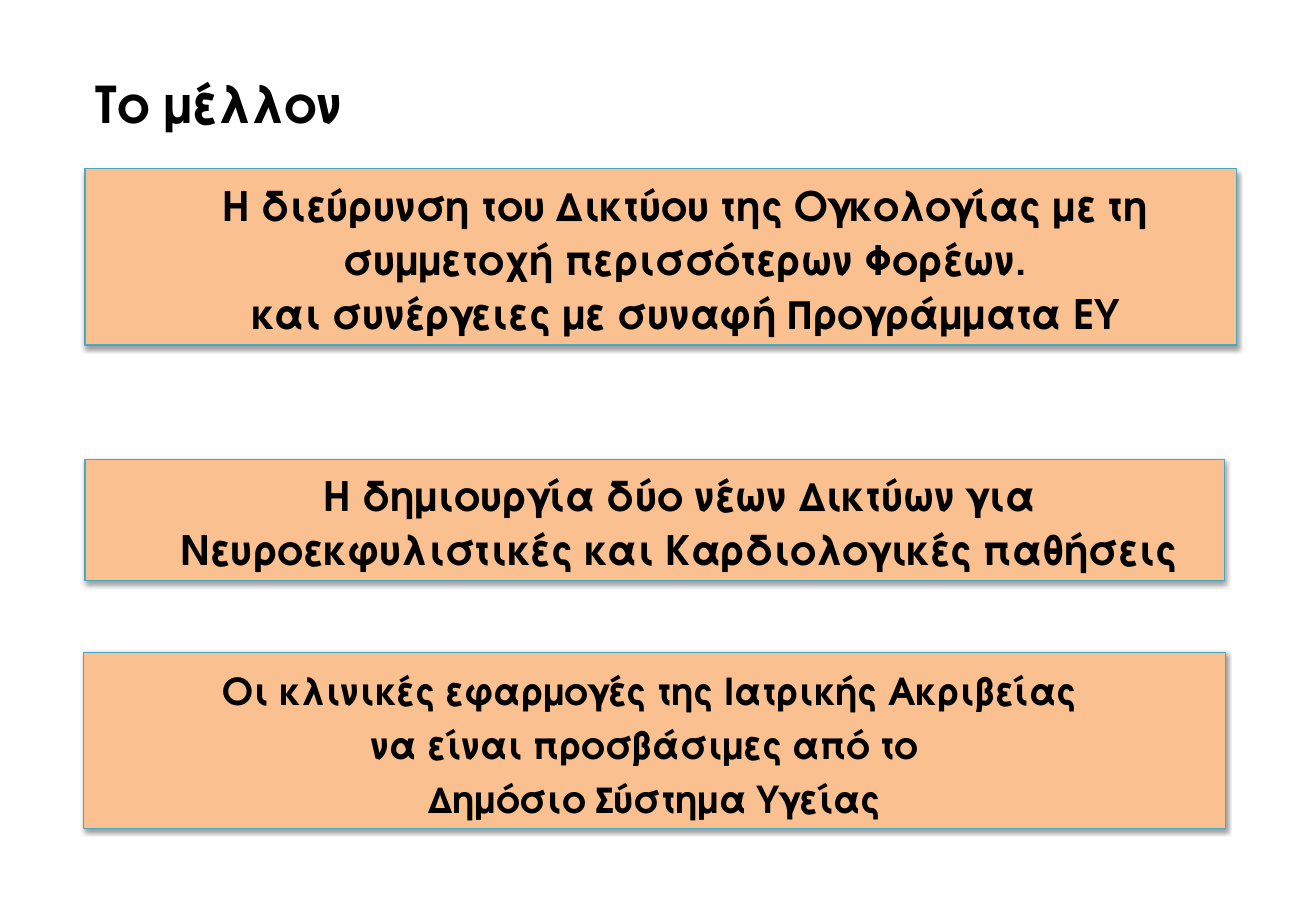
import lxml.etree
import pptx
import pptx.dml.color
import pptx.enum.shapes
import pptx.enum.text
import pptx.oxml
import pptx.oxml.ns
import pptx.util
from dataclasses import dataclass

Pt = pptx.util.Pt

# Content
TITLE = "Το μέλλον"
TITLE_FRAME = (49.7, 39.6, 675.4, 43.9)

# Each goal: frame (left, top, width, height), type size, and lines of
# (text, left margin, right margin)
GOALS = [
    ((50.4, 100.1, 682.6, 104.4), 24, [
        ("Η διεύρυνση του Δικτύου της Ογκολογίας με τη συμμετοχή περισσότερων Φορέων.", 28.8, 0),
        ("και συνέργειες με συναφή Προγράμματα ΕΥ", 28.8, 0),
    ]),
    ((50.4, 272.2, 675.4, 72), 24, [
        ("Η δημιουργία δύο νέων Δικτύων για Νευροεκφυλιστικές και Καρδιολογικές παθήσεις", 28.8, 0),
    ]),
    ((49.7, 386.6, 676.8, 104.4), 22, [
        ("Οι κλινικές εφαρμογές της Ιατρικής Ακριβείας", 0, 6),
        ("να είναι προσβάσιμες από το", 0, 12),
        ("Δημόσιο Σύστημα Υγείας", 0, 0),
    ]),
]


@dataclass(frozen=True)
class Theme:
    font: str = "TeX Gyre Adventor"
    text: str = "000000"
    fill: str = "FAC090"
    line: str = "46AAC5"
    title_size: float = 30
    line_spacing: float = 32


THEME = Theme()


def color(value):
    return pptx.dml.color.RGBColor.from_string(value)


def write_text(shape, lines, size, align, spacing=None,
               anchor=pptx.enum.text.MSO_ANCHOR.MIDDLE):
    frame = shape.text_frame
    frame.word_wrap = True
    frame.vertical_anchor = anchor
    frame.auto_size = pptx.enum.text.MSO_AUTO_SIZE.NONE
    frame.margin_left = frame.margin_right = Pt(7.2)
    frame.margin_top = frame.margin_bottom = Pt(3.6)
    for index, (text, left, right) in enumerate(lines):
        paragraph = frame.add_paragraph() if index else frame.paragraphs[0]
        paragraph.alignment = align
        if spacing:
            paragraph.line_spacing = Pt(spacing)
        properties = paragraph._p.get_or_add_pPr()
        properties.set("marL", str(Pt(left)))
        properties.set("marR", str(Pt(right)))
        properties.set("indent", "0")
        run = paragraph.add_run()
        run.text = text
        run.font.name = THEME.font
        run.font.size = Pt(size)
        run.font.bold = True
        run.font.color.rgb = color(THEME.text)


def add_shadow(shape):
    shape.shadow.inherit = False
    effects = shape._element.spPr.find(pptx.oxml.ns.qn("a:effectLst"))
    effects.append(pptx.oxml.parse_xml(
        f'<a:outerShdw {pptx.oxml.ns.nsdecls("a")} blurRad="{Pt(3.1)}" '
        f'dist="{Pt(1.6)}" dir="5400000" rotWithShape="0">'
        '<a:srgbClr val="000000"><a:alpha val="38000"/></a:srgbClr>'
        '</a:outerShdw>'))


def add_goal(slide, frame, size, lines):
    shape = slide.shapes.add_shape(
        pptx.enum.shapes.MSO_SHAPE.RECTANGLE, *map(Pt, frame))
    shape.fill.solid()
    shape.fill.fore_color.rgb = color(THEME.fill)
    shape.line.color.rgb = color(THEME.line)
    shape.line.width = Pt(0.75)
    add_shadow(shape)
    write_text(shape, lines, size, pptx.enum.text.PP_ALIGN.CENTER,
               spacing=THEME.line_spacing)


def main():
    presentation = pptx.Presentation()
    presentation.slide_width = Pt(780)
    presentation.slide_height = Pt(540)
    slide = presentation.slides.add_slide(presentation.slide_layouts[5])

    # Title
    title = slide.shapes.title
    title.left, title.top, title.width, title.height = map(Pt, TITLE_FRAME)
    write_text(title, [(TITLE, 0, 0)], THEME.title_size,
               pptx.enum.text.PP_ALIGN.LEFT,
               anchor=pptx.enum.text.MSO_ANCHOR.TOP)

    # Goals
    for frame, size, lines in GOALS:
        add_goal(slide, frame, size, lines)

    presentation.save("out.pptx")


if __name__ == "__main__":
    main()
